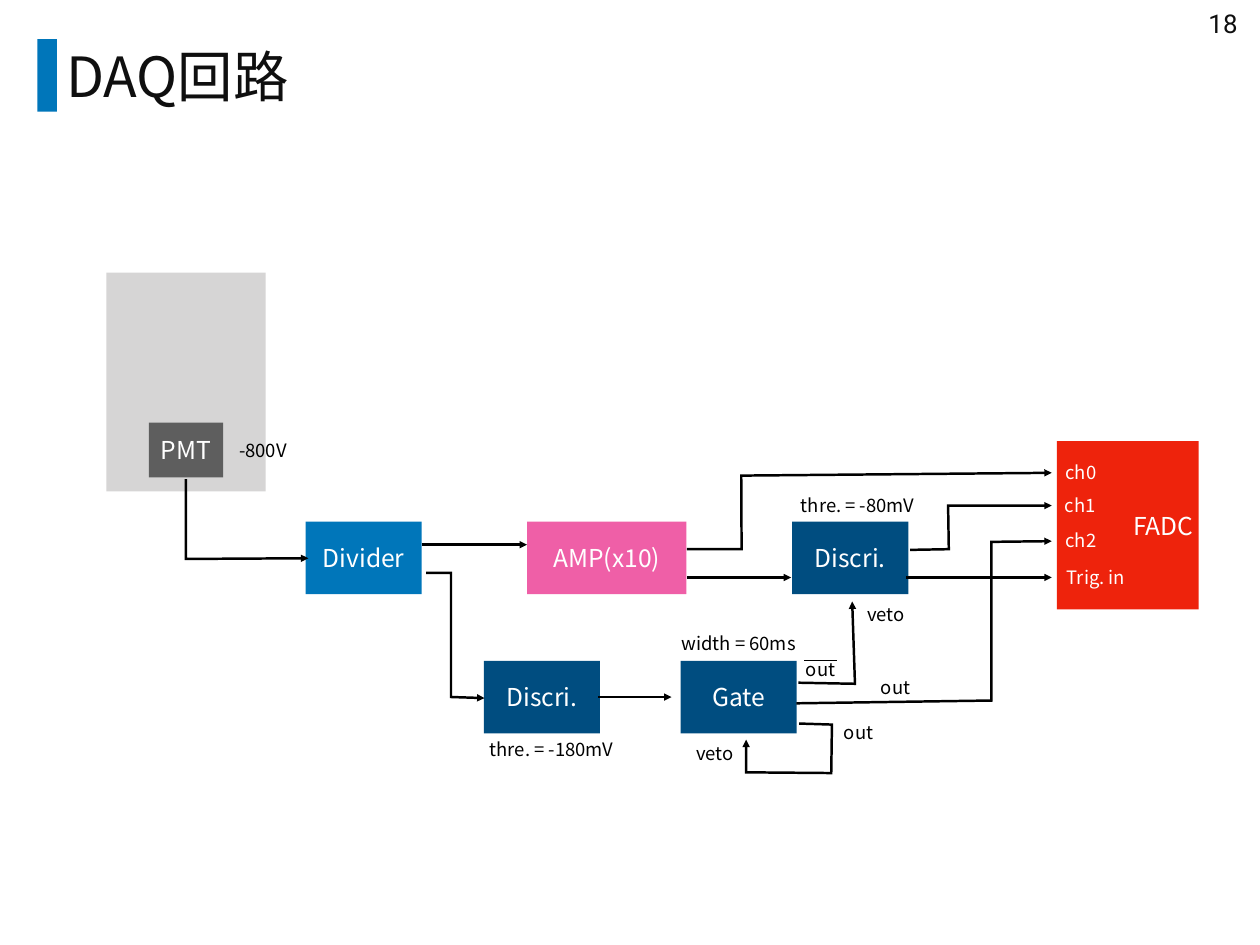
from dataclasses import dataclass

from lxml import etree
from pptx import Presentation
from pptx.dml.color import RGBColor
from pptx.enum import shapes, text
from pptx.oxml import ns
from pptx.util import Cm, Pt


@dataclass(frozen=True)
class Theme:
    sans: str = "Noto Sans CJK JP"
    digit: str = "Roboto"
    title: int = 45
    page: int = 21
    block: int = 20
    label: int = 15
    wire: int = 2
    ink: str = "0F0F0F"
    black: str = "000000"
    white: str = "FFFFFF"
    blue: str = "0076BA"
    navy: str = "004D80"
    pink: str = "EF5FA7"
    red: str = "EE230C"
    light: str = "D6D5D5"
    dark: str = "5E5E5E"


THEME = Theme()
ALIGN = text.PP_ALIGN
MIDDLE = text.MSO_ANCHOR.MIDDLE
PAD = Cm(0.15)
SMALL, WIDE = (3.33, 2.08), (4.57, 2.08)
TOP, LOW = 14.96, 18.95  # tops of the two rows of modules

# words, fill, alignment, left, top, size
BLOCKS = [
    ("", THEME.blue, ALIGN.CENTER, 1.07, 1.12, (0.56, 2.08)),
    ("", THEME.light, ALIGN.CENTER, 3.05, 7.82, (4.57, 6.27)),
    ("PMT", THEME.dark, ALIGN.CENTER, 4.27, 12.12, (2.13, 1.57)),
    ("Divider", THEME.blue, ALIGN.CENTER, 8.76, TOP, SMALL),
    ("AMP(x10)", THEME.pink, ALIGN.CENTER, 15.11, TOP, WIDE),
    ("FADC", THEME.red, ALIGN.RIGHT, 30.3, 12.65, (4.06, 4.83)),
    ("Discri.", THEME.navy, ALIGN.CENTER, 22.71, TOP, SMALL),
    ("Discri.", THEME.navy, ALIGN.CENTER, 13.87, LOW, SMALL),
    ("Gate", THEME.navy, ALIGN.CENTER, 19.51, LOW, SMALL),
]

ARROWS = [
    ((12.09, 15.62), (15.11, 15.62)),
    ((19.69, 16.56), (22.68, 16.56)),
    ((17.15, 19.99), (19.25, 19.99)),
    ((25.98, 16.56), (30.15, 16.56)),
]

BENDS = [
    [(5.33, 13.74), (5.33, 16.03), (8.84, 16.01)],
    [(12.22, 16.43), (12.93, 16.43), (12.93, 19.99), (13.89, 20.02)],
    [(19.69, 15.75), (21.26, 15.75), (21.25, 13.64), (30.15, 13.56)],
    [(26.09, 15.77), (27.2, 15.75), (27.18, 14.5), (30.15, 14.5)],
    [(22.83, 20.17), (28.42, 20.09), (28.42, 15.54), (30.15, 15.52)],
    [(22.89, 19.58), (24.51, 19.61), (24.43, 17.25)],
    [(22.91, 20.75), (23.85, 20.78), (23.83, 22.17), (21.39, 22.15),
     (21.39, 21.21)],
]

# words, colour, left, top, width
LABELS = [
    ("ch0", THEME.white, 30.3, 13.11, 1.37),
    ("ch1", THEME.white, 30.28, 14.07, 1.37),
    ("ch2", THEME.white, 30.3, 15.06, 1.37),
    ("Trig. in", THEME.white, 30.3, 16.13, 2.24),
    ("-800V", THEME.black, 6.5, 12.5, 2.08),
    ("thre. = -180mV", THEME.black, 13.49, 21.06, 4.65),
    ("width = 60ms", THEME.black, 19.08, 18.03, 4.19),
    ("out", THEME.black, 22.89, 18.77, 1.27),
    ("out", THEME.black, 25.04, 19.28, 1.27),
    ("out", THEME.black, 23.98, 20.57, 1.27),
    ("veto", THEME.black, 24.61, 17.2, 1.57),
    ("veto", THEME.black, 19.71, 21.18, 1.57),
    ("thre. = -80mV", THEME.black, 22.45, 14.07, 4.27),
]


def apply(item, values):
    for name, value in values.items():
        setattr(item, name, value)


def write(shape, words, size, color, align=ALIGN.CENTER, face=THEME.sans,
          anchor=MIDDLE, wrap=False):
    frame = shape.text_frame
    apply(frame, dict(margin_left=PAD, margin_right=PAD, margin_top=PAD,
                      margin_bottom=PAD, vertical_anchor=anchor,
                      word_wrap=wrap))
    line = frame.paragraphs[0]
    line.alignment = align
    run = line.add_run()
    run.text = words
    apply(run.font, dict(name=face, size=Pt(size)))
    run.font.color.rgb = RGBColor.from_string(color)
    east = etree.SubElement(run.font._element, ns.qn("a:ea"))
    east.set("typeface", face)


def add_text(slide, words, box, size, color, **form):
    shape = slide.shapes.add_textbox(*map(Cm, box))
    write(shape, words, size, color, **form)


def add_block(slide, words, fill, align, left, top, size):
    shape = slide.shapes.add_shape(shapes.MSO_SHAPE.RECTANGLE,
                                   *map(Cm, (left, top, *size)))
    shape.shadow.inherit = False
    shape.fill.solid()
    shape.fill.fore_color.rgb = RGBColor.from_string(fill)
    shape.line.fill.background()
    if words:
        write(shape, words, THEME.block, THEME.white, align, wrap=True)


def ink_line(shape, width, arrow=True):
    """Colour a line and, unless told not to, put an arrowhead at its end."""
    shape.line.width = Pt(width)
    shape.line.color.rgb = RGBColor.from_string(THEME.black)
    if arrow:
        line = shape.line._get_or_add_ln()
        etree.SubElement(line, ns.qn("a:miter")).set("lim", "400000")
        etree.SubElement(line, ns.qn("a:tailEnd")).set("type", "triangle")


def add_line(slide, start, end, width=THEME.wire, arrow=True):
    line = slide.shapes.add_connector(shapes.MSO_CONNECTOR.STRAIGHT,
                                      *map(Cm, (*start, *end)))
    ink_line(line, width, arrow)
    etree.SubElement(line._element.spPr, ns.qn("a:effectLst"))


def add_bend(slide, points):
    start, *rest = [(Cm(x), Cm(y)) for x, y in points]
    pen = slide.shapes.build_freeform(*start)
    pen.add_line_segments(rest, close=False)
    shape = pen.convert_to_shape()
    shape.shadow.inherit = False
    shape.fill.background()
    ink_line(shape, THEME.wire)


def main():
    deck = Presentation()
    apply(deck, dict(slide_width=Cm(36.12), slide_height=Cm(27.1)))
    slide = deck.slides.add_slide(deck.slide_layouts[6])

    add_text(slide, "DAQ回路", (1.75, 0.66, 33.91, 3.02), THEME.title,
             THEME.ink, align=ALIGN.LEFT, wrap=True)
    add_text(slide, "18", (34.49, 0.08, 1.14, 1.14), THEME.page, THEME.ink,
             face=THEME.digit, anchor=text.MSO_ANCHOR.TOP)
    for block in BLOCKS:
        add_block(slide, *block)
    for start, end in ARROWS:
        add_line(slide, start, end)
    for points in BENDS:
        add_bend(slide, points)
    for words, color, left, top, width in LABELS:
        add_text(slide, words, (left, top, width, 0.84), THEME.label, color)
    add_line(slide, (23.06, LOW), (23.98, LOW), width=1, arrow=False)  # overbar

    deck.save("out.pptx")


if __name__ == "__main__":
    main()
